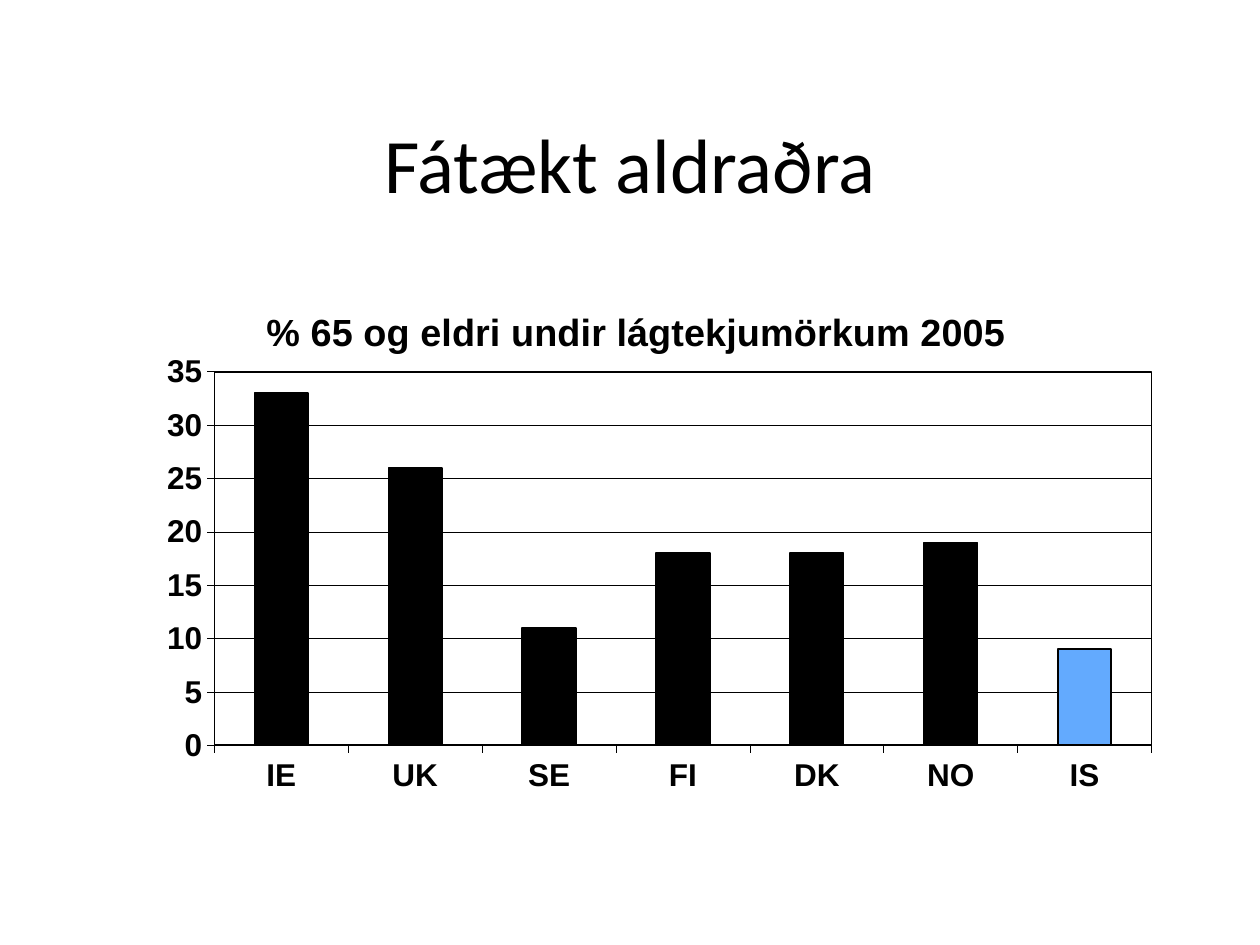
from lxml import etree
from pptx import Presentation
from pptx.chart.data import CategoryChartData
from pptx.dml.color import RGBColor
from pptx.enum.chart import XL_CHART_TYPE as ChartType, XL_TICK_MARK as Tick
from pptx.enum.text import MSO_ANCHOR as Anchor, PP_ALIGN as Align
from pptx.oxml import parse_xml
from pptx.oxml.ns import nsdecls, qn
from pptx.util import Pt

# Content
HEADING = "Fátækt aldraðra"
CHART_TITLE = "% 65 og eldri undir lágtekjumörkum 2005"
POVERTY = {"IE": 33, "UK": 26, "SE": 11, "FI": 18, "DK": 18, "NO": 19, "IS": 9}
HIGHLIGHT = "IS"

THEME = {
    "ink": RGBColor(0, 0, 0),
    "accent": RGBColor(0x63, 0xAA, 0xFE),
    "heading": {"name": "Calibri", "size": Pt(44)},
    "chart_title": {"name": "Arial", "size": Pt(21.6), "bold": True},
    "label": {"name": "Arial", "size": Pt(18), "bold": True},
    "hairline": Pt(0.25),
    "outline": Pt(1),
}

# Layout, in points
SLIDE = (720, 540)
MARGIN, WIDTH = 54, 612
HEADING_BOX = (MARGIN, 48, WIDTH, 90)
CHART_BOX = (MARGIN, 156, WIDTH, 324)
PLOT = {"x": 0.112, "y": 0.174, "w": 0.875, "h": 0.659}
TITLE_SPOT = {"x": 0.154, "y": 0.05}


def style_font(font, style):
    for attribute, value in style.items():
        setattr(font, attribute, value)
    font.color.rgb = THEME["ink"]


def style_line(line, width):
    line.color.rgb = THEME["ink"]
    line.width = width


def manual_layout(spot, inner=False):
    target = '<c:layoutTarget val="inner"/>' if inner else ""
    modes = "".join(f'<c:{key}Mode val="edge"/>' for key in "xy")
    sizes = "".join(f'<c:{key} val="{value}"/>' for key, value in spot.items())
    return parse_xml(f'<c:layout {nsdecls("c")}><c:manualLayout>{target}{modes}{sizes}'
                     "</c:manualLayout></c:layout>")


def add_heading(slide):
    frame = slide.shapes.add_textbox(*map(Pt, HEADING_BOX)).text_frame
    frame.word_wrap = True
    frame.vertical_anchor = Anchor.MIDDLE
    paragraph = frame.paragraphs[0]
    paragraph.alignment = Align.CENTER
    run = paragraph.add_run()
    run.text = HEADING
    style_font(run.font, THEME["heading"])


def add_poverty_chart(slide):
    poverty_data = CategoryChartData()
    poverty_data.categories = list(POVERTY)
    poverty_data.add_series("Series 1", list(POVERTY.values()))
    chart = slide.shapes.add_chart(
        ChartType.COLUMN_CLUSTERED, *map(Pt, CHART_BOX), poverty_data).chart
    chart.has_legend = False
    style_font(chart.font, THEME["label"])

    # Chart title
    chart.has_title = True
    title_frame = chart.chart_title.text_frame
    title_frame.text = CHART_TITLE
    style_font(title_frame.paragraphs[0].runs[0].font, THEME["chart_title"])
    title = chart.chart_title._element
    for old in title.findall(qn("c:layout")):
        title.remove(old)
    title.find(qn("c:tx")).addnext(manual_layout(TITLE_SPOT))

    # Axes and gridlines
    for axis in (chart.category_axis, chart.value_axis):
        axis.major_tick_mark = Tick.OUTSIDE
        axis.minor_tick_mark = Tick.NONE
        style_font(axis.tick_labels.font, THEME["label"])
        style_line(axis.format.line, THEME["hairline"])
    scale = {"minimum_scale": 0, "maximum_scale": 35, "major_unit": 5,
             "has_major_gridlines": True}
    for attribute, value in scale.items():
        setattr(chart.value_axis, attribute, value)
    style_line(chart.value_axis.major_gridlines.format.line, THEME["hairline"])

    # Columns, with one country highlighted
    plot = chart.plots[0]
    plot.vary_by_categories = False
    plot.gap_width = 150
    columns = plot.series[0]
    highlighted = columns.points[list(POVERTY).index(HIGHLIGHT)]
    for part, colour in ((columns, THEME["ink"]), (highlighted, THEME["accent"])):
        part.format.fill.solid()
        part.format.fill.fore_color.rgb = colour
        style_line(part.format.line, THEME["outline"])

    # Plot area position and frame
    area = chart._chartSpace.find(".//" + qn("c:plotArea"))
    for old in area.findall(qn("c:layout")):
        area.remove(old)
    area.insert(0, manual_layout(PLOT, inner=True))
    frame = etree.SubElement(area, qn("c:spPr"))
    etree.SubElement(frame, qn("a:noFill"))
    border = etree.SubElement(frame, qn("a:ln"), w=str(THEME["outline"]))
    ink = etree.SubElement(border, qn("a:solidFill"))
    etree.SubElement(ink, qn("a:srgbClr"), val=str(THEME["ink"]))


def main():
    deck = Presentation()
    deck.slide_width, deck.slide_height = map(Pt, SLIDE)
    slide = deck.slides.add_slide(deck.slide_layouts[6])
    add_heading(slide)
    add_poverty_chart(slide)
    deck.save("out.pptx")


if __name__ == "__main__":
    main()
